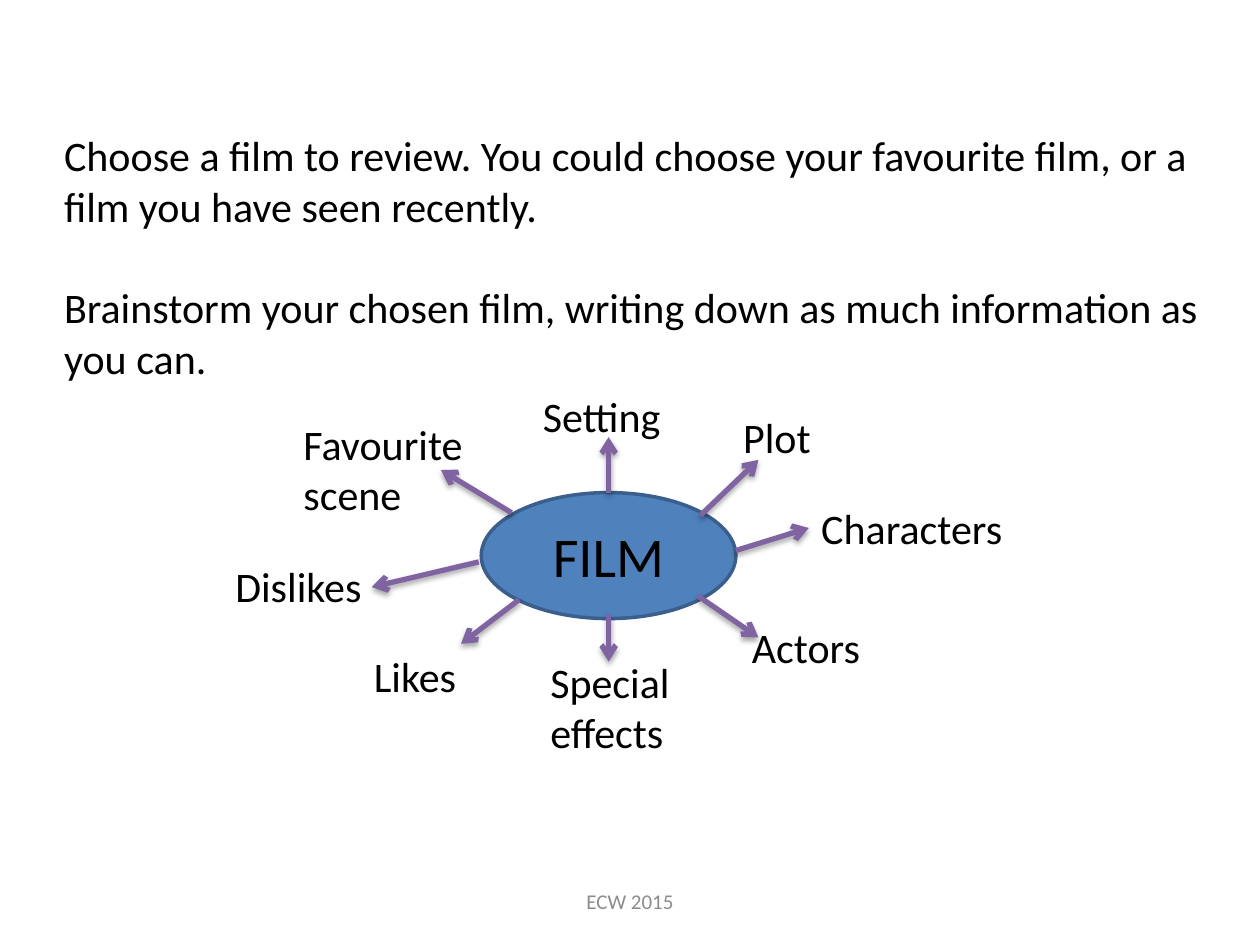
from pptx import Presentation
from pptx.dml.color import RGBColor
from pptx.enum.shapes import MSO_CONNECTOR, MSO_SHAPE
from pptx.enum.text import MSO_ANCHOR, PP_ALIGN
from pptx.oxml import parse_xml
from pptx.oxml.ns import nsdecls
from pptx.util import Pt

COLORS = {
    "text": "000000",
    "ellipse": "4F81BD",
    "outline": "3A5F8C",
    "arrow": "8064A2",
    "footer": "8C8C8C",
}
FONT = "Calibri"
LABEL_WIDTH, LINE_HEIGHT = 113, 29.3

# Topic, label left and top, arrow start and end, all relative to the mind map
TOPICS = [
    ("Setting", (176.1, 0.6), (220.8, 62.5), (220.8, 30.8)),
    ("Favourite scene", (39.3, 16.4), (165.3, 74), (125, 49.6)),
    ("Dislikes", (0.4, 97.8), (146.6, 102.1), (85.4, 116.5)),
    ("Likes", (79.6, 148.9), (169.6, 123.7), (136.5, 148.9)),
    ("Special effects", (180.4, 152.5), (220.8, 132.4), (220.8, 159)),
    ("Actors", (295.6, 132.4), (271.9, 121.6), (306.4, 145.3)),
    ("Plot", (290.6, 12.8), (273.3, 75.5), (306.4, 43.8)),
    ("Characters", (335.2, 64.7), (293.5, 95.6), (335.2, 82.7)),
]


def color(name):
    return RGBColor.from_string(COLORS[name])


def add_text(slide, box, paragraphs, size=24, color_name="text",
             alignment=PP_ALIGN.LEFT, anchor=MSO_ANCHOR.TOP, gap=0):
    frame = slide.shapes.add_textbox(*map(Pt, box)).text_frame
    frame.word_wrap = True
    frame.vertical_anchor = anchor
    frame.text = "\n".join(paragraphs)
    for index, paragraph in enumerate(frame.paragraphs):
        paragraph.alignment = alignment
        paragraph.space_before = Pt(gap if index else 0)
        paragraph.font.name = FONT
        paragraph.font.size = Pt(size)
        paragraph.font.color.rgb = color(color_name)


def add_arrow(slide, start, end):
    connector = slide.shapes.add_connector(
        MSO_CONNECTOR.STRAIGHT, *map(Pt, start + end))
    connector.line.color.rgb = color("arrow")
    connector.line.width = Pt(3)
    connector.line._get_or_add_ln().append(
        parse_xml(f'<a:tailEnd {nsdecls("a")} type="arrow"/>'))
    connector._element.spPr.append(parse_xml(
        f'<a:effectLst {nsdecls("a")}>'
        f'<a:outerShdw blurRad="{Pt(3.1)}" dist="{Pt(1.8)}" dir="5400000" rotWithShape="0">'
        '<a:srgbClr val="000000"><a:alpha val="35000"/></a:srgbClr>'
        '</a:outerShdw></a:effectLst>'))


def add_instructions(slide, box):
    add_text(slide, box, [
        "Choose a film to review. You could choose your favourite film, or a film you have seen recently.",
        "Brainstorm your chosen film, writing down as much information as you can.",
    ], gap=LINE_HEIGHT)


def add_mind_map(slide, left, top):
    # Central ellipse and its caption
    ellipse = slide.shapes.add_shape(
        MSO_SHAPE.OVAL, Pt(left + 148), Pt(top + 62.5), Pt(145.5), Pt(72))
    ellipse.shadow.inherit = False
    ellipse.fill.solid()
    ellipse.fill.fore_color.rgb = color("ellipse")
    ellipse.line.color.rgb = color("outline")
    ellipse.line.width = Pt(2)
    add_text(slide, (left + 169.6, top + 75.5, 102.2, 46), ["FILM"],
             size=32, alignment=PP_ALIGN.CENTER)

    # Topic labels
    for topic, (x, y), _, _ in TOPICS:
        width = 118.8 if topic == "Characters" else LABEL_WIDTH
        height = 7.2 + LINE_HEIGHT * len(topic.split())
        add_text(slide, (left + x, top + y, width, height), [topic])

    # Arrows from the ellipse to the topics
    for _, _, start, end in TOPICS:
        add_arrow(slide, (left + start[0], top + start[1]),
                  (left + end[0], top + end[1]))


def add_footer(slide, box):
    add_text(slide, box, ["ECW 2015"], size=12, color_name="footer",
             alignment=PP_ALIGN.CENTER, anchor=MSO_ANCHOR.MIDDLE)


def main():
    presentation = Presentation()
    presentation.slide_width, presentation.slide_height = Pt(720), Pt(540)
    slide = presentation.slides.add_slide(presentation.slide_layouts[6])
    add_instructions(slide, (29.5, 70.6, 669, 152.6))
    add_mind_map(slide, 127, 219)
    add_footer(slide, (246, 500.5, 228, 28.75))
    presentation.save("out.pptx")


if __name__ == "__main__":
    main()
